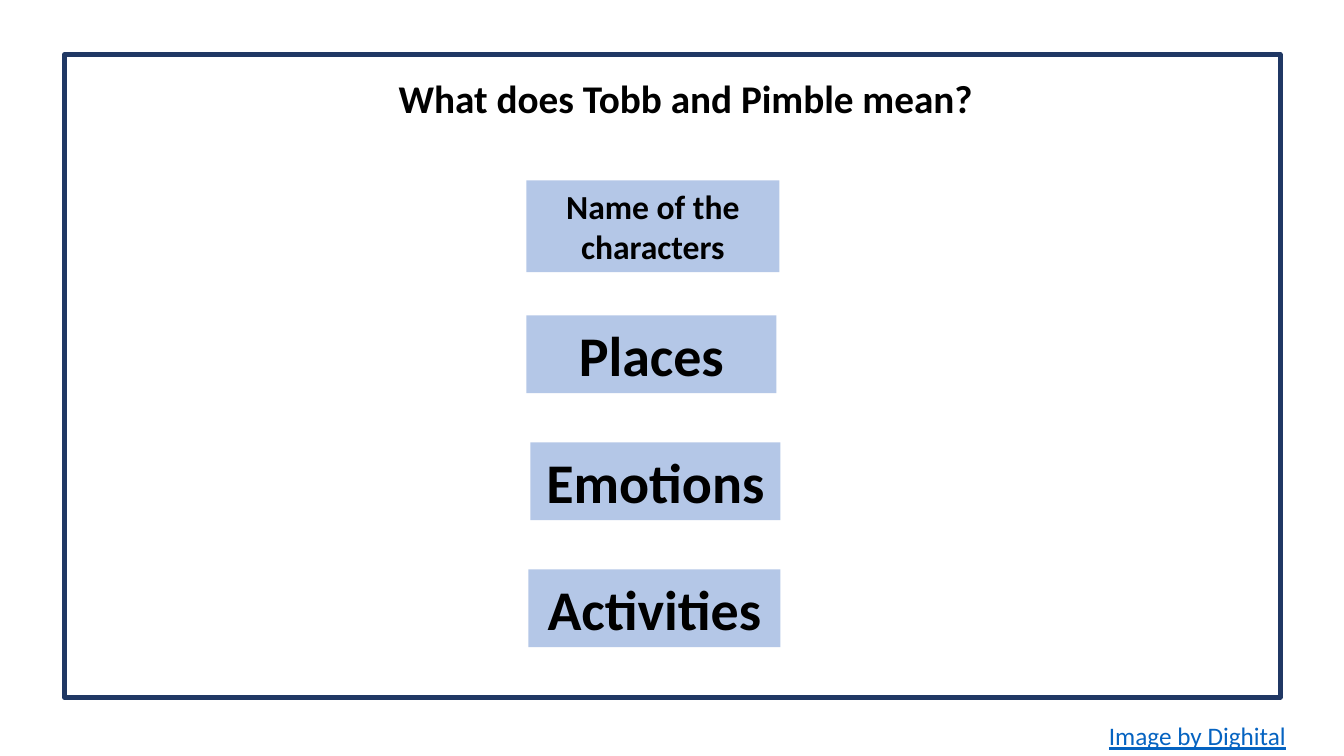
from pptx import Presentation
from pptx.dml.color import RGBColor
from pptx.enum.shapes import MSO_SHAPE
from pptx.enum.text import MSO_ANCHOR, MSO_AUTO_SIZE, PP_ALIGN
from pptx.util import Inches, Pt

COLORS = {
    "paper": "FFFFFF",
    "frame": "203864",
    "category": "B4C7E7",
    "text": "000000",
    "credit": "0563C1",
}


def write_text(shape, text, size, color="text", bold=True, underline=False,
               align=PP_ALIGN.CENTER, wrap=True, line_spacing=1.0):
    frame = shape.text_frame
    frame.word_wrap = wrap
    frame.auto_size = MSO_AUTO_SIZE.NONE
    frame.vertical_anchor = MSO_ANCHOR.TOP
    para = frame.paragraphs[0]
    para.alignment = align
    para.line_spacing = line_spacing
    span = para.add_run()
    span.text = text
    span.font.name = "Calibri"
    span.font.size = Pt(size)
    span.font.bold = bold
    span.font.underline = underline
    span.font.color.rgb = RGBColor.from_string(COLORS[color])


def add_box(page, left, top, width, height, fill):
    box = page.shapes.add_shape(MSO_SHAPE.RECTANGLE, Inches(left), Inches(top),
                                Inches(width), Inches(height))
    box.shadow.inherit = False
    box.fill.solid()
    box.fill.fore_color.rgb = RGBColor.from_string(COLORS[fill])
    box.line.fill.background()
    return box


deck = Presentation()
deck.slide_width = Inches(13.33)
deck.slide_height = Inches(7.5)
page = deck.slides.add_slide(deck.slide_layouts[5])

title = page.shapes.title
title.left, title.top = Inches(1.8), Inches(0.74)
title.width, title.height = Inches(10), Inches(0.65)
write_text(title, "What does Tobb and Pimble mean?", 28, line_spacing=0.9)

border = add_box(page, 0.64, 0.54, 12.06, 6.38, "paper")
border.line.color.rgb = RGBColor.from_string(COLORS["frame"])
border.line.width = Pt(3)
title.element.addprevious(border.element)

credit = page.shapes.add_textbox(Inches(10.9), Inches(7.1), Inches(1.98), Inches(0.4))
write_text(credit, "Image by Dighital", 18, color="credit", bold=False,
           underline=True, align=PP_ALIGN.LEFT, wrap=False)

categories = [
    ("Name of the characters", 24, 5.22, 1.79, 2.51, 0.91),
    ("Places", 40, 5.22, 3.13, 2.48, 0.77),
    ("Emotions", 40, 5.26, 4.39, 2.48, 0.77),
    ("Activities", 40, 5.24, 5.65, 2.5, 0.77),
]
for label, size, left, top, width, height in categories:
    box = add_box(page, left, top, width, height, "category")
    write_text(box, label, size)

deck.save("out.pptx")
